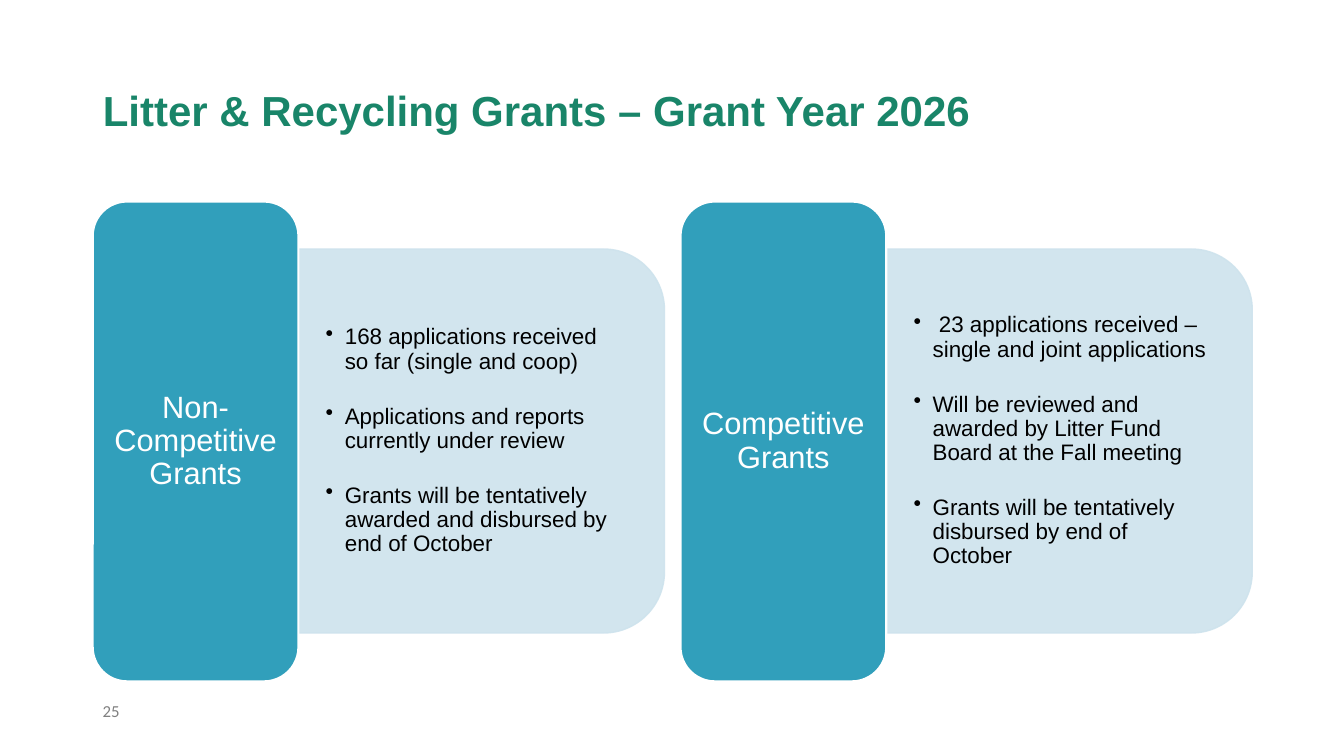
from pptx import Presentation
from pptx.dml.color import RGBColor
from pptx.enum.shapes import MSO_SHAPE
from pptx.enum.text import MSO_ANCHOR, PP_ALIGN
from pptx.oxml.ns import qn
from pptx.util import Inches, Pt
from lxml import etree

MIDDLE = MSO_ANCHOR.MIDDLE
CENTER = PP_ALIGN.CENTER
ROUNDED = MSO_SHAPE.ROUNDED_RECTANGLE
TWO_ROUND_CORNERS = MSO_SHAPE.ROUND_2_SAME_RECTANGLE

COLORS = {name: RGBColor.from_string(value) for name, value in {
    "title": "198569", "panel": "CEE3ED", "label": "319FBB",
    "white": "FFFFFF", "black": "000000", "number": "808080",
}.items()}

GRANTS = [
    ("Non-Competitive Grants", [
        "168 applications received so far (single and coop)",
        "Applications and reports currently under review",
        "Grants will be tentatively awarded and disbursed by end of October",
    ]),
    ("Competitive Grants", [
        " 23 applications received – single and joint applications",
        "Will be reviewed and awarded by Litter Fund Board at the Fall meeting",
        "Grants will be tentatively disbursed by end of October",
    ]),
]
LEFT, GRANT_STEP = 0.92, 5.83


def style(paragraph, size, color, face="Arial", bold=False):
    for run in paragraph.runs:
        run.font.size = Pt(size)
        run.font.name = face
        run.font.bold = bold
        run.font.color.rgb = COLORS[color]


def set_frame(frame, side, top):
    frame.word_wrap = True
    frame.vertical_anchor = MIDDLE
    frame.margin_left = frame.margin_right = Inches(side)
    frame.margin_top = frame.margin_bottom = Inches(top)


prs = Presentation()
prs.slide_width, prs.slide_height = Inches(13.33), Inches(7.5)
slide = prs.slides.add_slide(prs.slide_layouts[5])

# Title
title = slide.shapes.title
title.left, title.top = Inches(LEFT), Inches(0.4)
title.width, title.height = Inches(11.5), Inches(1.45)
title.text_frame.text = "Litter & Recycling Grants – Grant Year 2026"
set_frame(title.text_frame, 0.1, 0.05)
heading = title.text_frame.paragraphs[0]
heading.alignment = PP_ALIGN.LEFT
heading.line_spacing = 0.9
style(heading, 30, "title", bold=True)

for index, (grant, facts) in enumerate(GRANTS):
    left = LEFT + index * GRANT_STEP

    # Pale panel, turned so that its round corners face right
    panel = slide.shapes.add_shape(TWO_ROUND_CORNERS, Inches(left + 1.95),
                                   Inches(2.56), Inches(3.81), Inches(3.63))
    panel.rotation = 90
    panel.shadow.inherit = False
    panel.fill.solid()
    panel.fill.fore_color.rgb = COLORS["panel"]
    panel.line.color.rgb = COLORS["panel"]
    panel.line.width = Pt(1)
    for tint in panel.fill._xPr.iter(qn("a:srgbClr")):
        etree.SubElement(tint, qn("a:alpha")).set("val", "90000")

    # Facts on the panel
    fact_box = slide.shapes.add_textbox(Inches(left + 2.04), Inches(2.65),
                                        Inches(3.45), Inches(3.45))
    set_frame(fact_box.text_frame, 0.27, 0.14)
    fact_box.text_frame.text = "\n".join(facts)
    for number, fact in enumerate(fact_box.text_frame.paragraphs):
        properties = fact._p.get_or_add_pPr()
        properties.set("marL", str(Inches(0.19)))
        properties.set("indent", str(-Inches(0.19)))
        etree.SubElement(properties, qn("a:buChar")).set("char", "•")
        fact.line_spacing = 0.9
        if number:
            fact.space_before = Pt(22)
        style(fact, 16, "black")

    # Grant label
    label = slide.shapes.add_shape(ROUNDED, Inches(left), Inches(2),
                                   Inches(2.04), Inches(4.76))
    label.shadow.inherit = False
    label.fill.solid()
    label.fill.fore_color.rgb = COLORS["label"]
    label.line.color.rgb = COLORS["white"]
    label.line.width = Pt(1.5)
    set_frame(label.text_frame, 0.09, 0.05)
    label.text_frame.text = grant
    name = label.text_frame.paragraphs[0]
    name.alignment = CENTER
    name.line_spacing = 0.9
    style(name, 22, "white")

# Slide number
page_number = slide.shapes.add_textbox(Inches(LEFT), Inches(6.9),
                                       Inches(11.5), Inches(0.45))
page_number.text_frame.word_wrap = True
page_number.text_frame.text = "25"
style(page_number.text_frame.paragraphs[0], 12, "number", face="Calibri")

prs.save("out.pptx")
